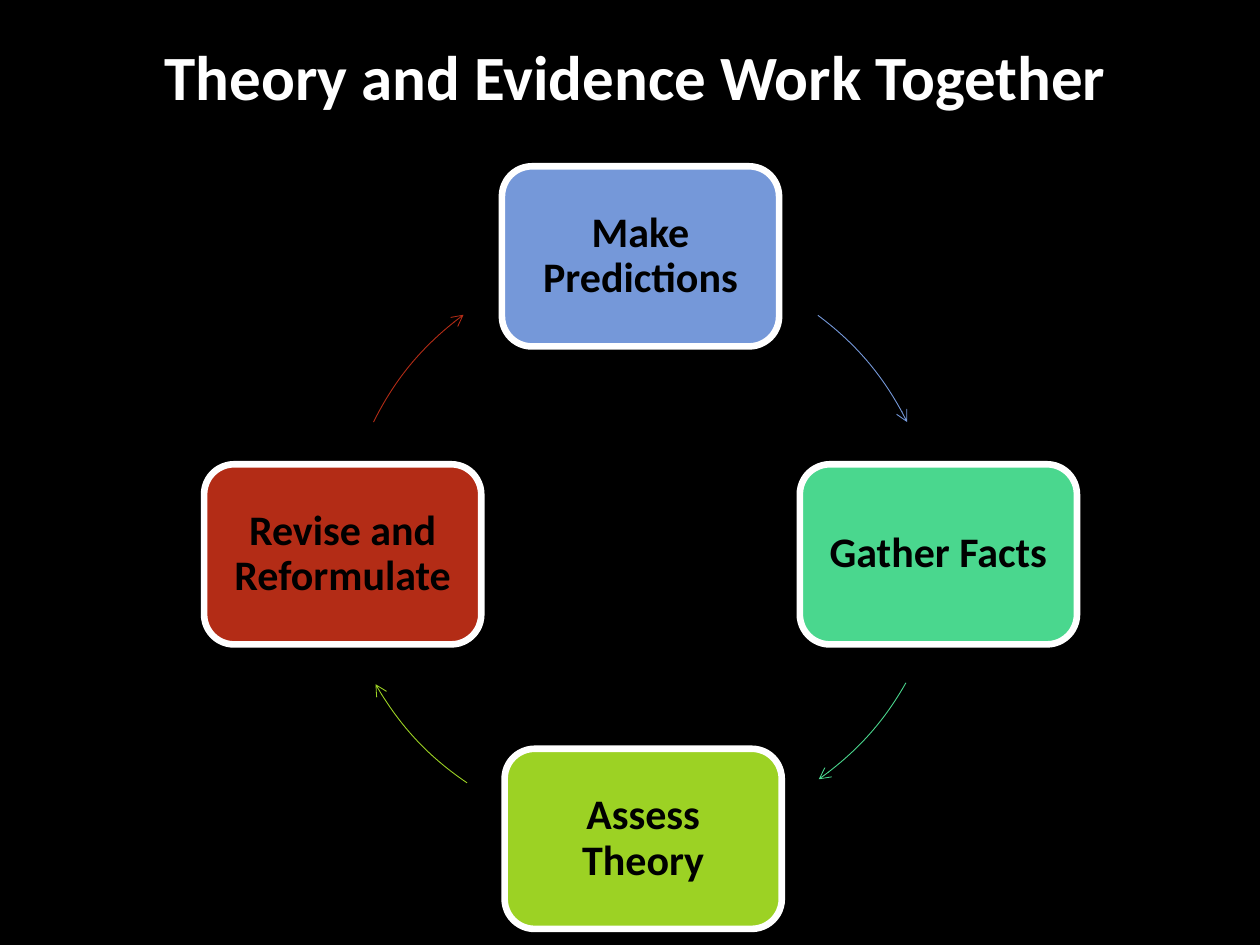
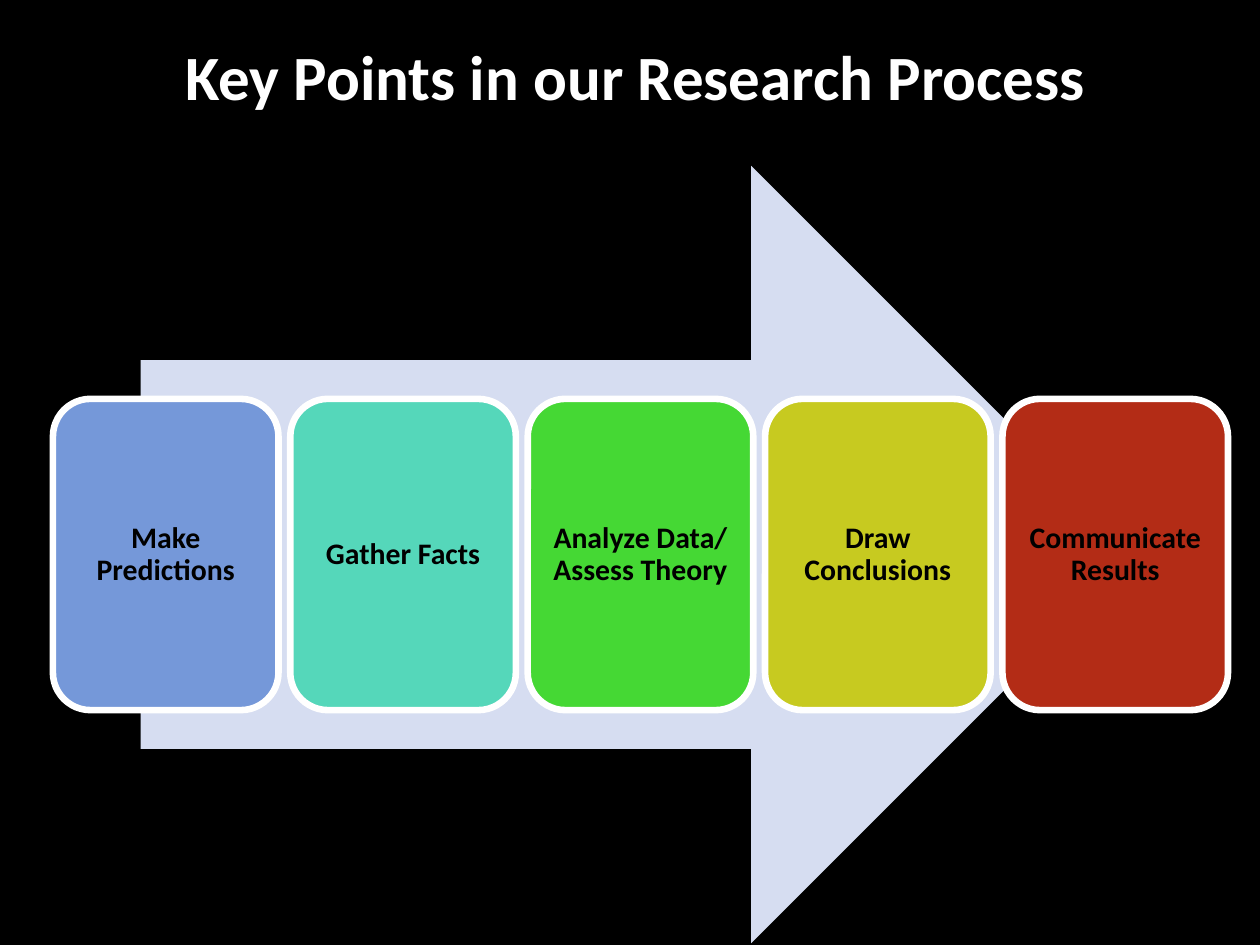
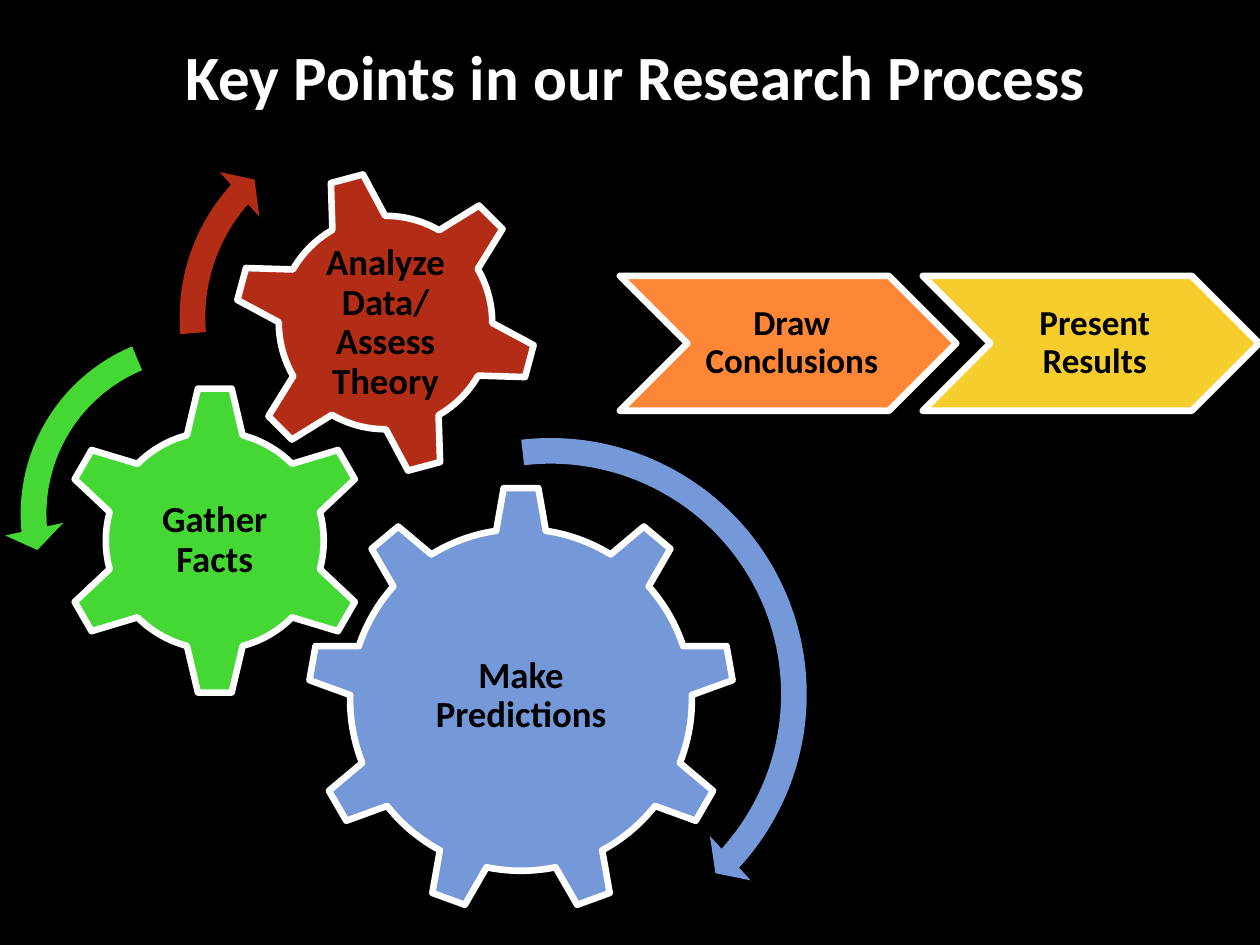
"""Build three slides on how theory and evidence drive a research process."""
import math
from dataclasses import dataclass
from typing import Any

from lxml import etree
from pptx import Presentation
from pptx import util as u
from pptx.dml.color import RGBColor
from pptx.enum import shapes, text
from pptx.oxml.ns import qn

WIDTH, HEIGHT = u.Inches(10), u.Inches(7.5)
COLUMNS = 100
FONT = "Calibri"
BLACK, WHITE, BLUE, RED = "000000", "FFFFFF", "7598D9", "B32C16"
GREEN, PALE_BLUE, MINT, LIME = "45D834", "D6DDF1", "4AD78E", "9CD224"
OUTLINE_PT = 3.78
ARC_RADIUS = 23.65
KIND = shapes.MSO_SHAPE


@dataclass(frozen=True)
class Box:
    """A rectangle measured in grid columns and rows."""
    left: float
    top: float
    width: float
    height: float


@dataclass(frozen=True)
class Label:
    """Wording with its size in points and its inset in grid units."""
    wording: str
    size: float
    inset: float
    left_inset: float | None = None


@dataclass(frozen=True)
class Block:
    """A filled shape, outlined in white when it carries a label."""
    kind: Any
    box: Box
    color: str
    label: Label | None = None
    adjustments: tuple[float, ...] = ()


@dataclass(frozen=True)
class Arc:
    """A thin circular arrow between two angles in degrees."""
    x: float
    y: float
    start: float
    end: float
    color: str


TITLE_BOX = Box(3.33, 2.5, 94.2, 11.8)
NODE_WIDTH, NODE_HEIGHT = 22, 14.3
NODES = [
    ("Make Predictions", 50.84, 20.35, BLUE),
    ("Gather Facts", 74.48, 44, MINT),
    ("Assess Theory", 51.05, 66.58, LIME),
    ("Revise and Reformulate", 27.2, 44, RED),
]
ARCS = [
    Arc(50.82, 44.02, 306.6, 333.6, BLUE),
    Arc(51.32, 42.55, 29.5, 54.7, MINT),
    Arc(50.33, 42.55, 124.1, 150.2, LIME),
    Arc(50.83, 44.02, 206.4, 233.6, RED),
]
STEPS = [
    ("Make Predictions", BLUE),
    ("Gather Facts", "55D7BA"),
    ("Analyze Data/ Assess Theory", GREEN),
    ("Draw Conclusions", "C7CA20"),
    ("Communicate Results", RED),
]
STEP_LEFT, STEP_PITCH = 4.2, 18.84
TILTED_GEAR = Block(KIND.GEAR_6, Box(18.5, 13.5, 24.2, 24.2), RED)
TILTED_LABEL = Label("Analyze Data/ Assess Theory", 21, 0.3)
TILTED_LABEL_BOX = Box(23.8, 18.84, 13.6, 13.6)
GEARS = [
    Block(KIND.GEAR_9, Box(24.4, 38.6, 33.9, 33.9), BLUE,
          Label("Make Predictions", 21, 0.3)),
    Block(KIND.GEAR_6, Box(4.7, 30.56, 24.7, 24.7), GREEN,
          Label("Gather Facts", 21, 0.3)),
]
TURNS = [
    Block(KIND.CIRCULAR_ARROW, Box(22, 33.4, 43.4, 43.4), BLUE,
          adjustments=(0.047, 2.99, 25.425, 158.057, 0.055)),
    Block(KIND.LEFT_CIRCULAR_ARROW, Box(0.3, 25.04, 31.5, 31.5), GREEN,
          adjustments=(0.065, 4.3, 104.891, 148.378, 0.075)),
    Block(KIND.CIRCULAR_ARROW, Box(12.9, 8.2, 34, 34), RED,
          adjustments=(0.06, 3.941, 133.138, 105.082, 0.07)),
]
CHEVRONS = [("Draw Conclusions", "FE8637"), ("Present Results", "F5CD2D")]
CHEVRON_LEFT, CHEVRON_PITCH = 49.2, 24.04


def grid(units: float) -> u.Emu:
    """Return the length of a number of grid columns or rows."""
    return u.Emu(round(units * WIDTH / COLUMNS))


def rgb(value: str) -> RGBColor:
    """Return the colour of a hex string."""
    return RGBColor.from_string(value)


def set_all(target: Any, values: dict[str, Any]) -> None:
    """Set every named attribute on the target."""
    for name, value in values.items():
        setattr(target, name, value)


def place(box: Box) -> tuple[u.Emu, ...]:
    """Return left, top, width and height of a box."""
    return tuple(grid(n) for n in (box.left, box.top, box.width, box.height))


def move(sp: Any, box: Box) -> None:
    """Move and size a shape to a box."""
    set_all(sp, dict(zip(("left", "top", "width", "height"), place(box))))


def write(sp: Any, wording: str, size: float, color: str, spacing: float) -> None:
    """Write one centred bold paragraph."""
    p = sp.text_frame.paragraphs[0]
    set_all(p, {"alignment": text.PP_ALIGN.CENTER, "line_spacing": spacing})
    r = p.add_run()
    r.text = wording
    set_all(r.font, {"name": FONT, "size": u.Pt(size), "bold": True})
    r.font.color.rgb = rgb(color)


def add_label(sp: Any, label: Label) -> None:
    """Put a label in the middle of a shape."""
    inset = grid(label.inset)
    left = inset if label.left_inset is None else grid(label.left_inset)
    set_all(sp.text_frame, {
        "word_wrap": True, "vertical_anchor": text.MSO_ANCHOR.MIDDLE,
        "margin_left": left, "margin_right": inset,
        "margin_top": inset, "margin_bottom": inset})
    write(sp, label.wording, label.size, BLACK, 0.9)


def add_block(s: Any, block: Block, outlined: bool = False) -> Any:
    """Draw a filled shape with its label."""
    sp = s.shapes.add_shape(block.kind, *place(block.box))
    sp.shadow.inherit = False
    sp.fill.solid()
    sp.fill.fore_color.rgb = rgb(block.color)
    for i, value in enumerate(block.adjustments):
        sp.adjustments[i] = value
    if block.label or outlined:
        sp.line.color.rgb = rgb(WHITE)
        sp.line.width = u.Pt(OUTLINE_PT)
    else:
        sp.line.fill.background()
    if block.label:
        add_label(sp, block.label)
    return sp


def curve_points(arc: Arc) -> list[tuple[int, int]]:
    """Return the four Bezier points of an arc inside its circle's box."""
    start, end = math.radians(arc.start), math.radians(arc.end)
    pull = 4 / 3 * math.tan((end - start) / 4)
    offsets = ((start, 0), (start, pull), (end, -pull), (end, 0))
    return [(grid(ARC_RADIUS * (1 + math.cos(a) - k * math.sin(a))),
             grid(ARC_RADIUS * (1 + math.sin(a) + k * math.cos(a))))
            for a, k in offsets]


def add_arc(s: Any, arc: Arc) -> None:
    """Draw a thin arc that ends in an open arrowhead."""
    points = curve_points(arc)
    builder = s.shapes.build_freeform(*points[0])
    builder.add_line_segments(points[-1:], close=False)
    sp = builder.convert_to_shape()
    size = 2 * ARC_RADIUS
    move(sp, Box(arc.x - ARC_RADIUS, arc.y - ARC_RADIUS, size, size))
    outline = next(sp._element.iter(qn("a:path")))
    for side in ("w", "h"):
        outline.set(side, str(grid(size)))
    for child in list(outline):
        outline.remove(child)
    for tag, part in (("a:moveTo", points[:1]), ("a:cubicBezTo", points[1:])):
        command = etree.SubElement(outline, qn(tag))
        for x, y in part:
            etree.SubElement(command, qn("a:pt"), x=str(x), y=str(y))
    sp.shadow.inherit = False
    sp.fill.background()
    sp.line.color.rgb = rgb(arc.color)
    sp.line.width = u.Pt(0.5)
    etree.SubElement(sp.line._get_or_add_ln(), qn("a:tailEnd"), type="arrow")


def add_slide(prs: Any, title: str) -> Any:
    """Add a slide with the shared title style."""
    s = prs.slides.add_slide(prs.slide_layouts[5])
    sp = s.shapes.title
    move(sp, TITLE_BOX)
    set_all(sp.text_frame, {
        "word_wrap": True, "auto_size": text.MSO_AUTO_SIZE.NONE,
        "vertical_anchor": text.MSO_ANCHOR.TOP})
    write(sp, title, 36, WHITE, 1.0)
    return s


def build_cycle(prs: Any) -> None:
    """Build the four-node cycle."""
    s = add_slide(prs, "Theory and Evidence Work Together")
    for wording, x, y, color in NODES:
        box = Box(x - NODE_WIDTH / 2, y - NODE_HEIGHT / 2, NODE_WIDTH, NODE_HEIGHT)
        add_block(s, Block(KIND.ROUNDED_RECTANGLE, box, color, Label(wording, 24, 1)))
    for arc in ARCS:
        add_arc(s, arc)


def build_steps(prs: Any) -> None:
    """Build the row of steps on a wide arrow."""
    s = add_slide(prs, "Key Points in our Research Process")
    add_block(s, Block(KIND.RIGHT_ARROW, Box(11.17, 13.16, 79.3, 61.7), PALE_BLUE))
    for i, (wording, color) in enumerate(STEPS):
        box = Box(STEP_LEFT + STEP_PITCH * i, 31.66, 17.9, 24.7)
        add_block(s, Block(KIND.ROUNDED_RECTANGLE, box, color, Label(wording, 17, 0.7)))


def build_gears(prs: Any) -> None:
    """Build the meshing gears and the closing chevrons."""
    s = add_slide(prs, "Key Points in our Research Process")
    for gear in GEARS:
        add_block(s, gear)
    add_block(s, TILTED_GEAR, outlined=True).rotation = 345
    add_label(s.shapes.add_textbox(*place(TILTED_LABEL_BOX)), TILTED_LABEL)
    for turn in TURNS:
        add_block(s, turn)
    for i, (wording, color) in enumerate(CHEVRONS):
        box = Box(CHEVRON_LEFT + CHEVRON_PITCH * i, 21.9, 26.7, 10.7)
        add_block(s, Block(KIND.CHEVRON, box, color, Label(wording, 20, 0.3, 0.9)))


def main() -> None:
    """Build and save the presentation."""
    prs = Presentation()
    set_all(prs, {"slide_width": WIDTH, "slide_height": HEIGHT})
    fill = prs.slide_master.background.fill
    fill.solid()
    fill.fore_color.rgb = rgb(BLACK)
    for build in (build_cycle, build_steps, build_gears):
        build(prs)
    prs.save("out.pptx")


if __name__ == "__main__":
    main()
